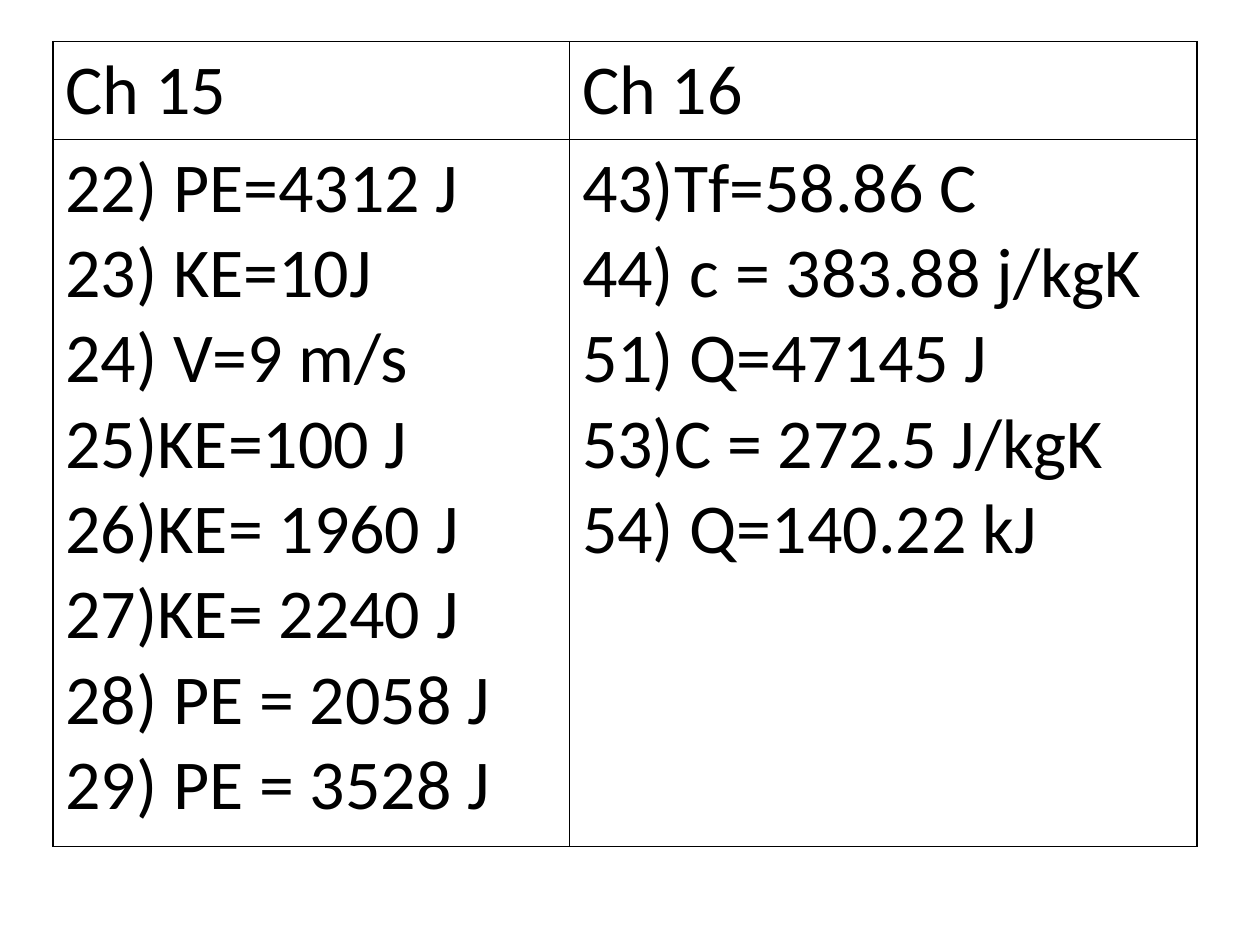
from dataclasses import dataclass

from lxml.etree import SubElement
from pptx import Presentation
from pptx.dml.color import RGBColor as Rgb
from pptx.oxml.ns import qn
from pptx.table import _Cell as Cell
from pptx.text.text import _Paragraph as Paragraph
from pptx.util import Inches, Pt

COLORS = {"ink": "000000", "border": "000000"}
FONT = "Calibri"
TEXT_SIZE = Pt(40)
BORDER_WIDTH = Pt(1)
HANGING = Inches(0.38)
ROW_HEIGHTS = (0.67, 5.61)


@dataclass(frozen=True)
class Chapter:
    title: str
    width: float
    first_number: int
    numbered: tuple[str, ...]
    plain: tuple[str, ...] = ()


CHAPTERS = (
    Chapter(
        "Ch 15", 4.1, 22,
        (" PE=4312 J", " KE=10J", " V=9 m/s", "KE=100 J",
         "KE= 1960 J", "KE= 2240 J", " PE = 2058 J", " PE = 3528 J"),
    ),
    Chapter(
        "Ch 16", 4.98, 43,
        ("Tf=58.86 C", " c = 383.88 j/kgK"),
        ("51) Q=47145 J", "53)C = 272.5 J/kgK", "54) Q=140.22 kJ"),
    ),
)


def number_paragraph(paragraph: Paragraph, start: int) -> None:
    """Give the paragraph automatic "1)" numbering with a hanging indent."""
    properties = paragraph._p.get_or_add_pPr()
    properties.set("marL", str(HANGING))
    properties.set("indent", str(-HANGING))
    SubElement(properties, qn("a:buFont"), typeface="+mj-lt")
    SubElement(properties, qn("a:buAutoNum"), type="arabicParenR", startAt=str(start))


def write_lines(cell: Cell, lines: tuple[str, ...], numbered: int = 0, start: int = 1) -> None:
    """Write one paragraph per line; the first `numbered` ones get numbers."""
    frame = cell.text_frame
    for index, line in enumerate(lines):
        paragraph = frame.add_paragraph() if index else frame.paragraphs[0]
        if index < numbered:
            number_paragraph(paragraph, start)
        run = paragraph.add_run()
        run.text = line
        run.font.name = FONT
        run.font.size = TEXT_SIZE
        run.font.bold = False
        run.font.color.rgb = Rgb.from_string(COLORS["ink"])


def outline_cell(cell: Cell) -> None:
    properties = cell._tc.get_or_add_tcPr()
    for side in ("L", "R", "T", "B"):
        line = SubElement(properties, qn(f"a:ln{side}"), w=str(BORDER_WIDTH))
        fill = SubElement(line, qn("a:solidFill"))
        SubElement(fill, qn("a:srgbClr"), val=COLORS["border"])
    cell.fill.background()


def main() -> None:
    deck = Presentation()
    deck.slide_width, deck.slide_height = Inches(10), Inches(7.5)
    slide = deck.slides.add_slide(deck.slide_layouts[6])

    answers = slide.shapes.add_table(
        len(ROW_HEIGHTS), len(CHAPTERS), Inches(0.42), Inches(0.33),
        Inches(sum(chapter.width for chapter in CHAPTERS)), Inches(sum(ROW_HEIGHTS)),
    ).table
    answers.first_row = False
    answers.horz_banding = False
    for row, height in zip(answers.rows, ROW_HEIGHTS):
        row.height = Inches(height)

    for column, chapter in enumerate(CHAPTERS):
        answers.columns[column].width = Inches(chapter.width)
        write_lines(answers.cell(0, column), (chapter.title,))
        write_lines(
            answers.cell(1, column), chapter.numbered + chapter.plain,
            len(chapter.numbered), chapter.first_number,
        )
    for cell in answers.iter_cells():
        outline_cell(cell)

    deck.save("out.pptx")


if __name__ == "__main__":
    main()
